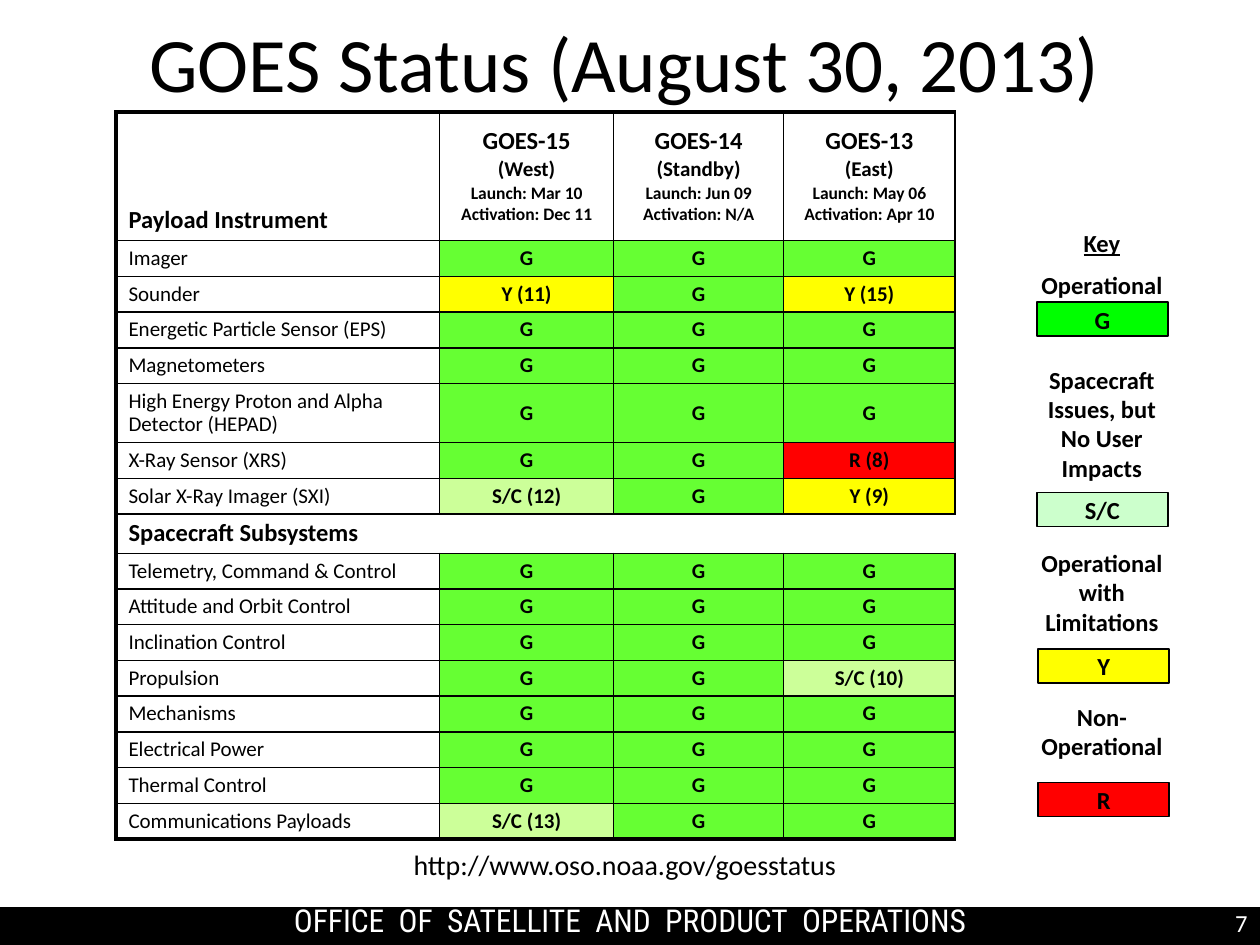
from dataclasses import dataclass

from lxml.etree import SubElement
from pptx import Presentation
from pptx.dml.color import RGBColor as RGB
from pptx.enum.shapes import MSO_SHAPE as SHAPE
from pptx.enum.text import MSO_ANCHOR as ANCHOR, PP_ALIGN as ALIGN
from pptx.oxml import parse_xml
from pptx.oxml.ns import nsdecls, qn
from pptx.util import Inches, Pt


@dataclass(frozen=True)
class Theme:
    font: str = "Calibri"
    footer_font: str = "Roboto Condensed"
    black: str = "000000"
    white: str = "FFFFFF"
    good: str = "66FF33"
    issues: str = "CCFF99"
    limited: str = "FFFF00"
    failed: str = "FF0000"
    key_good: str = "00FF00"
    key_issues: str = "CCFFCC"
    title: int = 44
    footer: int = 18
    link: int = 16
    heading: int = 14
    body: int = 12
    small: int = 10
    thin: float = 1
    thick: float = 2.25


T = Theme()


def add_text(p, text, size, bold=False, color=T.black, font=T.font):
    r = p.add_run()
    r.text = text
    r.font.name, r.font.size, r.font.bold = font, Pt(size), bold
    r.font.color.rgb = RGB.from_string(color)
    return r


def set_borders(cell, widths):
    """Set left, right, top and bottom borders in points; 0 is no line."""
    tc_pr = cell._tc.get_or_add_tcPr()
    for i, (side, width) in enumerate(zip("LRTB", widths)):
        paint = (f'<a:solidFill><a:srgbClr val="{T.black}"/></a:solidFill>'
                 if width else "<a:noFill/>")
        tc_pr.insert(i, parse_xml(
            f'<a:ln{side} {nsdecls("a")} w="{int(Pt(width))}">{paint}</a:ln{side}>'))


prs = Presentation()
prs.slide_width, prs.slide_height = Inches(10), Inches(7.5)
s = prs.slides.add_slide(prs.slide_layouts[5])

# Title
title = s.shapes.title
title.left, title.top = Inches(0.75), Inches(0.08)
title.width, title.height = Inches(8.42), Inches(1)
tf = title.text_frame
tf.vertical_anchor = ANCHOR.TOP
tf.margin_top = Inches(0.04)
p = tf.paragraphs[0]
p.alignment = ALIGN.CENTER
add_text(p, "GOES Status (August 30, 2013)", T.title)

# Footer bar
bar = s.shapes.add_shape(SHAPE.RECTANGLE, 0, Inches(7.2), Inches(10), Inches(0.3))
bar.shadow.inherit = False
bar.fill.solid()
bar.fill.fore_color.rgb = RGB.from_string(T.black)
bar.line.fill.background()

# Page number
tf = s.shapes.add_textbox(Inches(7.67), Inches(7.16), Inches(2.33), Inches(0.34)).text_frame
tf.word_wrap = True
p = tf.paragraphs[0]
p.alignment = ALIGN.RIGHT
add_text(p, "7", T.heading, color=T.white)

# Office name, with widened word gaps
tf = s.shapes.add_textbox(0, Inches(7.15), Inches(10), Inches(0.3)).text_frame
tf.word_wrap = True
tf.margin_top = tf.margin_bottom = 0
p = tf.paragraphs[0]
p.alignment = ALIGN.CENTER
for i, word in enumerate("OFFICE OF SATELLITE AND PRODUCT OPERATIONS".split()):
    if i:
        gap = add_text(p, " ", T.footer, color=T.white, font=T.footer_font)
        gap.font._element.set("spc", "400")
    add_text(p, word, T.footer, color=T.white, font=T.footer_font)

# Status link
tf = s.shapes.add_textbox(Inches(0.75), Inches(6.68), Inches(8.42), Inches(0.36)).text_frame
tf.word_wrap = True
tf.vertical_anchor = ANCHOR.MIDDLE
p = tf.paragraphs[0]
p.alignment = ALIGN.CENTER
add_text(p, "http://www.oso.noaa.gov/goesstatus", T.link)

# Status table: a row with one entry is a section heading
satellites = [
    ("GOES-15", "(West)", "Launch: Mar 10", "Activation: Dec 11"),
    ("GOES-14", "(Standby)", "Launch: Jun 09", "Activation: N/A"),
    ("GOES-13", "(East)", "Launch: May 06", "Activation: Apr 10"),
]
rows = [
    ("Payload Instrument", *satellites),
    ("Imager", "G", "G", "G"),
    ("Sounder", "Y (11)", "G", "Y (15)"),
    ("Energetic Particle Sensor (EPS)", "G", "G", "G"),
    ("Magnetometers", "G", "G", "G"),
    ("High Energy Proton and Alpha Detector (HEPAD)", "G", "G", "G"),
    ("X-Ray Sensor (XRS)", "G", "G", "R (8)"),
    ("Solar X-Ray Imager (SXI)", "S/C (12)", "G", "Y (9)"),
    ("Spacecraft Subsystems",),
    ("Telemetry, Command & Control", "G", "G", "G"),
    ("Attitude and Orbit Control", "G", "G", "G"),
    ("Inclination Control", "G", "G", "G"),
    ("Propulsion", "G", "G", "S/C (10)"),
    ("Mechanisms", "G", "G", "G"),
    ("Electrical Power", "G", "G", "G"),
    ("Thermal Control", "G", "G", "G"),
    ("Communications Payloads", "S/C (13)", "G", "G"),
]
status_fill = {"G": T.good, "S/C": T.issues, "Y": T.limited, "R": T.failed}
special_heights = {0: 1.02, 5: 0.47, 8: 0.31}
table_height = 5.77
row_height = ((table_height - sum(special_heights.values()))
              / (len(rows) - len(special_heights)))
header_sizes = (T.heading, T.body, T.small, T.small)

table = s.shapes.add_table(len(rows), 4, Inches(0.92), Inches(0.89),
                           Inches(6.66), Inches(table_height)).table
table.first_row = table.horz_banding = False
for column, width in zip(table.columns, (2.57, 1.38, 1.35, 1.36)):
    column.width = Inches(width)

for i, row in enumerate(rows):
    table.rows[i].height = Inches(special_heights.get(i, row_height))
    section = len(row) == 1
    for j in range(4):
        cell = table.cell(i, j)
        entry = row[j] if j < len(row) else ""
        header = isinstance(entry, tuple)
        lines = entry if header else (entry,)
        size = T.heading if i == 0 or section else T.body
        color = T.white
        if j and entry and not header:
            color = status_fill[entry.split()[0]]
        cell.fill.solid()
        cell.fill.fore_color.rgb = RGB.from_string(color)
        if j:
            cell.vertical_anchor = ANCHOR.MIDDLE
        elif i == 0:
            cell.vertical_anchor = ANCHOR.BOTTOM

        tf = cell.text_frame
        for k, line in enumerate(lines):
            p = tf.add_paragraph() if k else tf.paragraphs[0]
            p.line_spacing = 0.9
            p.alignment = ALIGN.CENTER if j else ALIGN.LEFT
            line_size = header_sizes[k] if header else size
            if k:
                p.space_before = Pt(0.15 * line_size)
            if line:
                add_text(p, line, line_size, bold=bool(j or i == 0 or section))
            else:
                SubElement(p._p, qn("a:endParaRPr"), sz=str(T.body * 100))

        set_borders(cell, (
            T.thick if j == 0 else 0 if section else T.thin,
            0 if section else T.thin,
            T.thick if i == 0 else T.thin,
            T.thick if i == len(rows) - 1 else T.thin,
        ))

# Key labels, with room for a swatch under each
tf = s.shapes.add_textbox(Inches(8.17), Inches(1.76), Inches(1.15), Inches(4.65)).text_frame
tf.word_wrap = True
tf.margin_left = tf.margin_right = Inches(0.08)
labels = [("Key", 0), ("Operational", 7), ("Spacecraft Issues, but No User Impacts", 37.5),
          ("Operational with Limitations", 37.5), ("Non-Operational", 37.5)]
for i, (label, space) in enumerate(labels):
    p = tf.add_paragraph() if i else tf.paragraphs[0]
    p.alignment = ALIGN.CENTER
    if space:
        p.space_before = Pt(space)
    r = add_text(p, label, T.heading, bold=True)
    r.font.underline = i == 0

# Key swatches
swatches = [("G", 8.23, 2.4, T.key_good), ("S/C", 8.23, 3.91, T.key_issues),
            ("Y", 8.24, 5.15, T.limited), ("R", 8.24, 6.21, T.failed)]
for code, left, top, color in swatches:
    sp = s.shapes.add_shape(SHAPE.RECTANGLE, Inches(left), Inches(top),
                            Inches(1.04), Inches(0.27))
    sp.shadow.inherit = False
    sp.fill.solid()
    sp.fill.fore_color.rgb = RGB.from_string(color)
    sp.line.color.rgb = RGB.from_string(T.black)
    sp.line.width = Pt(T.thin)
    tf = sp.text_frame
    tf.word_wrap = False
    tf.vertical_anchor = ANCHOR.MIDDLE
    p = tf.paragraphs[0]
    p.alignment = ALIGN.CENTER
    add_text(p, code, T.heading, bold=True)

prs.save("out.pptx")
